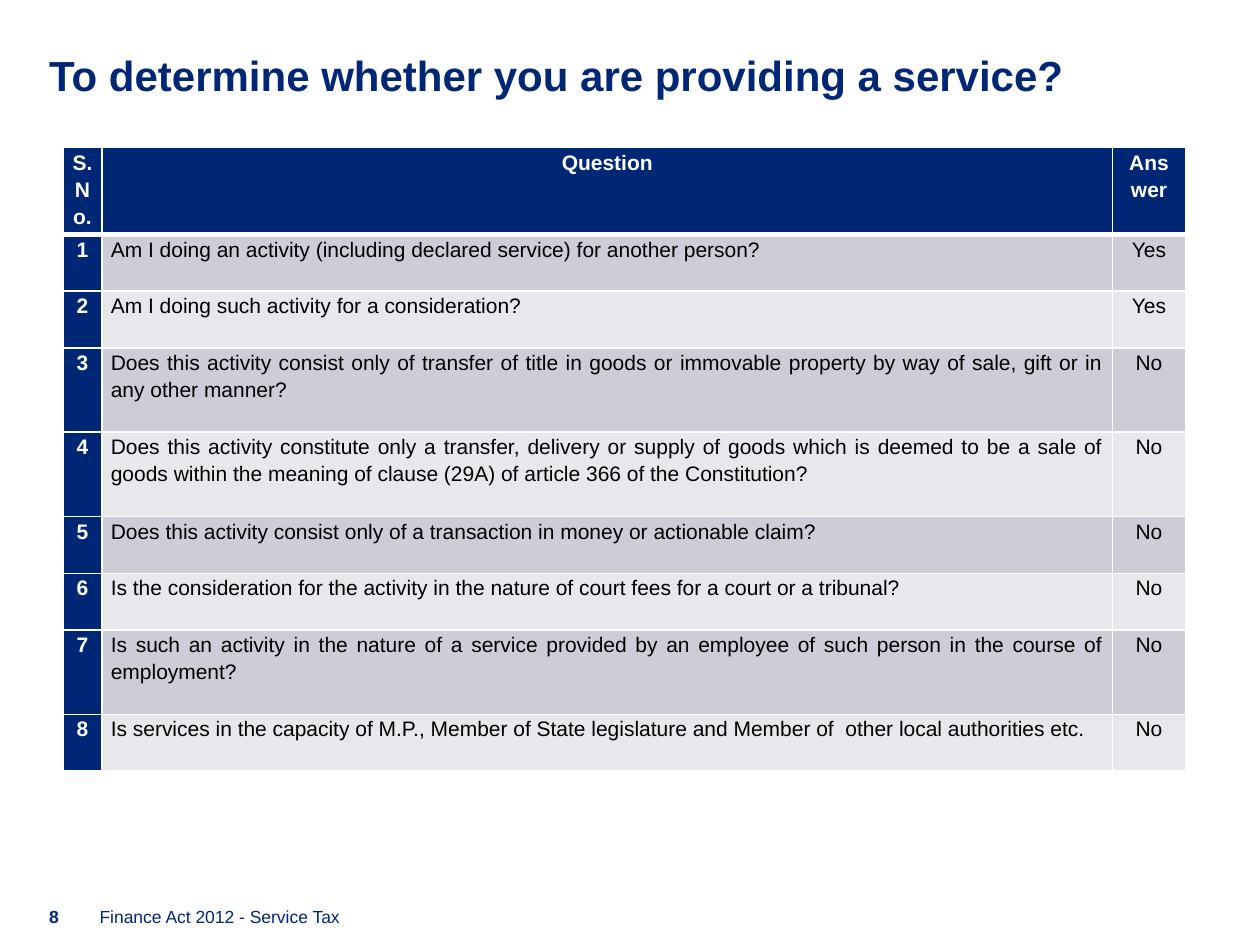
from lxml import etree
from pptx import Presentation
from pptx import util as u
from pptx.dml.color import RGBColor
from pptx.enum import text
from pptx.oxml import ns

NAVY = RGBColor(0x00, 0x27, 0x76)
WHITE = RGBColor(0xFF, 0xFF, 0xFF)
BLACK = RGBColor(0x00, 0x00, 0x00)
BANDS = (RGBColor(0xCC, 0xCD, 0xD6), RGBColor(0xE7, 0xE8, 0xEC))

CENTER = text.PP_ALIGN.CENTER
JUSTIFY = text.PP_ALIGN.JUSTIFY
COLUMNS = (0.31, 8.02, 0.58)
HEADER_HEIGHT = 0.63
LINE_HEIGHTS = {1: 0.45, 2: 0.67}
HEADERS = ("S.\nNo.", "Question", "Answer")
QUESTIONS = (
    ("Am I doing an activity (including declared service) for another person?", "Yes", 1),
    ("Am I doing such activity for a consideration?", "Yes", 1),
    ("Does this activity consist only of transfer of title in goods or immovable "
     "property by way of sale, gift or in any other manner?", "No", 2),
    ("Does this activity constitute only a transfer, delivery or supply of goods "
     "which is deemed to be a sale of goods within the meaning of clause (29A) of "
     "article 366 of the Constitution?", "No", 2),
    ("Does this activity consist only of a transaction in money or actionable claim?", "No", 1),
    ("Is the consideration for the activity in the nature of court fees for a court "
     "or a tribunal?", "No", 1),
    ("Is such an activity in the nature of a service provided by an employee of such "
     "person in the course of employment?", "No", 2),
    ("Is services in the capacity of M.P., Member of State legislature and Member of  "
     "other local authorities etc.", "No", 1),
)


def set_attrs(obj, **values):
    for name, value in values.items():
        setattr(obj, name, value)


def style_font(font, size, color, bold):
    set_attrs(font, name="Arial", size=u.Pt(size), bold=bold)
    font.color.rgb = color


def add_label(slide, box, wording, size, bold=False):
    sp = slide.shapes.add_textbox(*map(u.Inches, box))
    tf = sp.text_frame
    set_attrs(tf, word_wrap=True, vertical_anchor=text.MSO_ANCHOR.TOP,
              margin_left=0, margin_top=0, margin_right=0, margin_bottom=0)
    r = tf.paragraphs[0].add_run()
    r.text = wording
    style_font(r.font, size, NAVY, bold)


def add_borders(cell, bottom, top):
    tc_pr = cell._tc.get_or_add_tcPr()
    for side, width in (("L", 1), ("R", 1), ("T", top), ("B", bottom)):
        ln = etree.SubElement(tc_pr, ns.qn(f"a:ln{side}"), w=str(u.Pt(width)))
        fill = etree.SubElement(ln, ns.qn("a:solidFill"))
        etree.SubElement(fill, ns.qn("a:srgbClr"), val=str(WHITE))


def fill_cell(cell, wording, fill, color, bold, align, top=1, bottom=1):
    set_attrs(cell, margin_left=u.Inches(0.07), margin_right=u.Inches(0.07),
              margin_top=0, margin_bottom=0, text=wording)
    add_borders(cell, bottom, top)
    cell.fill.solid()
    cell.fill.fore_color.rgb = fill
    for p in cell.text_frame.paragraphs:
        set_attrs(p, alignment=align, line_spacing=1.15)
        for r in p.runs:
            style_font(r.font, 12, color, bold)


def add_questions(slide, left, top):
    heights = [HEADER_HEIGHT] + [LINE_HEIGHTS[lines] for *_, lines in QUESTIONS]
    box = (left, top, sum(COLUMNS), sum(heights))
    table = slide.shapes.add_table(
        len(heights), len(COLUMNS), *map(u.Inches, box)).table
    for column, width in zip(table.columns, COLUMNS):
        column.width = u.Inches(width)
    for row, height in zip(table.rows, heights):
        row.height = u.Inches(height)
    for col, header in enumerate(HEADERS):
        fill_cell(table.cell(0, col), header, NAVY, WHITE, True, CENTER, bottom=3)
    for row, (question, answer, _) in enumerate(QUESTIONS, 1):
        band = BANDS[(row - 1) % 2]
        edge = 3 if row == 1 else 1
        fill_cell(table.cell(row, 0), str(row), NAVY, WHITE, True, CENTER, edge)
        fill_cell(table.cell(row, 1), question, band, BLACK, False, JUSTIFY, edge)
        fill_cell(table.cell(row, 2), answer, band, BLACK, False, CENTER, edge)


def add_footer(slide, left, top, width, height):
    number_width = 0.4
    add_label(slide, (left + number_width, top, width - number_width, height),
              "Finance Act 2012 - Service Tax", 10)
    add_label(slide, (left, top, number_width, height), "8", 10, True)


def main():
    prs = Presentation()
    set_attrs(prs, slide_width=u.Inches(10), slide_height=u.Inches(7.5))
    slide = prs.slides.add_slide(prs.slide_layouts[6])
    add_label(slide, (0.39, 0.39, 9.21, 0.69),
              "To determine whether you are providing a service?", 24, True)
    add_questions(slide, 0.5, 1.17)
    add_footer(slide, 0.39, 7.19, 6.31, 0.13)
    prs.save("out.pptx")


if __name__ == "__main__":
    main()
